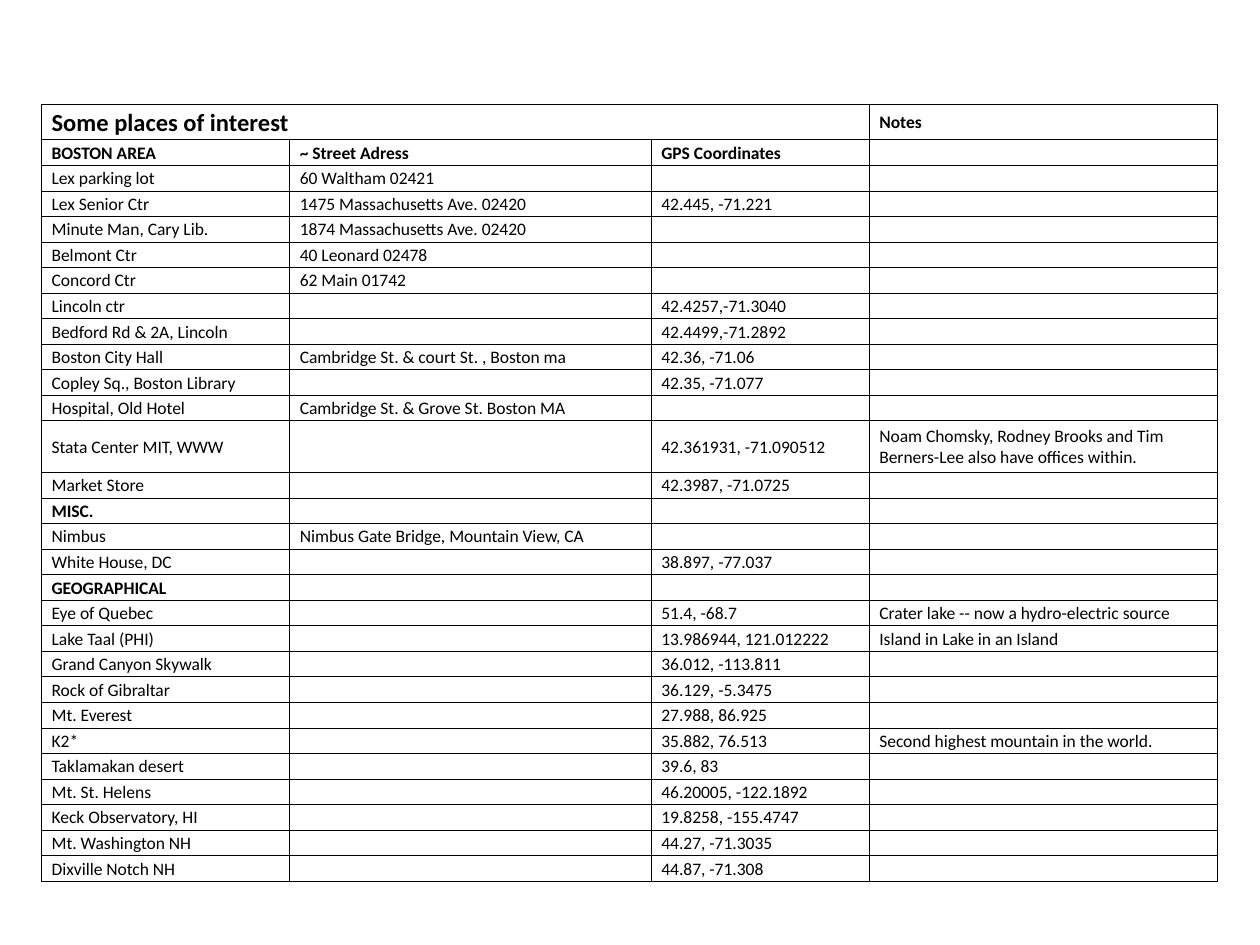
import lxml.etree
import pptx
import pptx.dml.color
import pptx.enum.text
import pptx.oxml.ns
import pptx.util

Inches = pptx.util.Inches
Pt = pptx.util.Pt
qn = pptx.oxml.ns.qn

COLORS = {"ink": "000000"}

PLACES = [
    ("Some places of interest", "", "", "Notes"),
    ("BOSTON AREA", "~ Street Adress", "GPS Coordinates", ""),
    ("Lex parking lot", "60 Waltham 02421", "", ""),
    ("Lex Senior Ctr", "1475 Massachusetts Ave. 02420", "42.445, -71.221", ""),
    ("Minute Man, Cary Lib.", "1874 Massachusetts Ave. 02420", "", ""),
    ("Belmont Ctr", "40 Leonard 02478", "", ""),
    ("Concord Ctr", "62 Main 01742", "", ""),
    ("Lincoln ctr", "", "42.4257,-71.3040", ""),
    ("Bedford Rd & 2A, Lincoln", "", "42.4499,-71.2892", ""),
    ("Boston City Hall", "Cambridge St. & court St. , Boston ma", "42.36, -71.06", ""),
    ("Copley Sq., Boston Library", "", "42.35, -71.077", ""),
    ("Hospital, Old Hotel", "Cambridge St. & Grove St. Boston MA", "", ""),
    ("Stata Center MIT, WWW", "", "42.361931, -71.090512",
     "Noam Chomsky, Rodney Brooks and Tim Berners-Lee also have offices within."),
    ("Market Store", "", "42.3987, -71.0725", ""),
    ("MISC.", "", "", ""),
    ("Nimbus", "Nimbus Gate Bridge, Mountain View, CA", "", ""),
    ("White House, DC", "", "38.897, -77.037", ""),
    ("GEOGRAPHICAL", "", "", ""),
    ("Eye of Quebec", "", "51.4, -68.7", "Crater lake -- now a hydro-electric source"),
    ("Lake Taal (PHI)", "", "13.986944, 121.012222", "Island in Lake in an Island"),
    ("Grand Canyon Skywalk", "", "36.012, -113.811", ""),
    ("Rock of Gibraltar", "", "36.129, -5.3475", ""),
    ("Mt. Everest", "", "27.988, 86.925", ""),
    ("K2*", "", "35.882, 76.513", "Second highest mountain in the world."),
    ("Taklamakan desert", "", "39.6, 83", ""),
    ("Mt. St. Helens", "", "46.20005, -122.1892", ""),
    ("Keck Observatory, HI", "", "19.8258, -155.4747", ""),
    ("Mt. Washington NH", "", "44.27, -71.3035", ""),
    ("Dixville Notch NH", "", "44.87, -71.308", ""),
]
COLUMN_WIDTHS = [1.97, 2.87, 1.73, 2.76]
TABLE_HEIGHT = 6.17
SPECIAL_HEIGHTS = {0: 0.28, 12: 0.41}
BOLD_ROWS = {0, 1, 14, 17}


def write_text(frame, text, size=10, bold=False, color="ink", font="Calibri"):
    paragraph = frame.paragraphs[0]
    if not text:
        lxml.etree.SubElement(paragraph._p, qn("a:endParaRPr"), sz=str(size * 100))
        return
    run = paragraph.add_run()
    run.text = text
    run.font.name = font
    run.font.size = Pt(size)
    run.font.bold = bold
    run.font.color.rgb = pptx.dml.color.RGBColor.from_string(COLORS[color])


class PlacesSlide:
    def __init__(self, presentation):
        self.slide = presentation.slides.add_slide(presentation.slide_layouts[6])
        self.border_width = Pt(0.5)

    def add_borders(self, cell):
        properties = cell._tc.get_or_add_tcPr()
        for order, side in enumerate(("a:lnL", "a:lnR", "a:lnT", "a:lnB")):
            border = lxml.etree.Element(qn(side), w=str(self.border_width))
            fill = lxml.etree.SubElement(border, qn("a:solidFill"))
            lxml.etree.SubElement(fill, qn("a:srgbClr"), val=COLORS["ink"])
            properties.insert(order, border)

    def add_cell(self, cell, text, **text_format):
        cell.margin_left = Inches(0.08)
        cell.margin_top = cell.margin_right = Inches(0.01)
        cell.margin_bottom = 0
        cell.vertical_anchor = pptx.enum.text.MSO_ANCHOR.MIDDLE
        cell.fill.background()
        self.add_borders(cell)
        write_text(cell.text_frame, text, **text_format)

    def add_table(self, rows, left, top):
        table = self.slide.shapes.add_table(
            len(rows), len(COLUMN_WIDTHS), Inches(left), Inches(top),
            Inches(sum(COLUMN_WIDTHS)), Inches(TABLE_HEIGHT)).table
        table.first_row = table.horz_banding = False
        for column, width in zip(table.columns, COLUMN_WIDTHS):
            column.width = Inches(width)
        plain_height = ((TABLE_HEIGHT - sum(SPECIAL_HEIGHTS.values()))
                        / (len(rows) - len(SPECIAL_HEIGHTS)))
        for r, row in enumerate(rows):
            table.rows[r].height = Inches(SPECIAL_HEIGHTS.get(r, plain_height))
            for c, text in enumerate(row):
                self.add_cell(table.cell(r, c), text, bold=r in BOLD_ROWS,
                              size=14 if (r, c) == (0, 0) else 10)
        table.cell(0, 0).merge(table.cell(0, 2))


def main():
    presentation = pptx.Presentation()
    presentation.slide_width = Inches(10)
    presentation.slide_height = Inches(7.5)
    PlacesSlide(presentation).add_table(PLACES, left=0.33, top=0.83)
    presentation.save("out.pptx")


if __name__ == "__main__":
    main()
